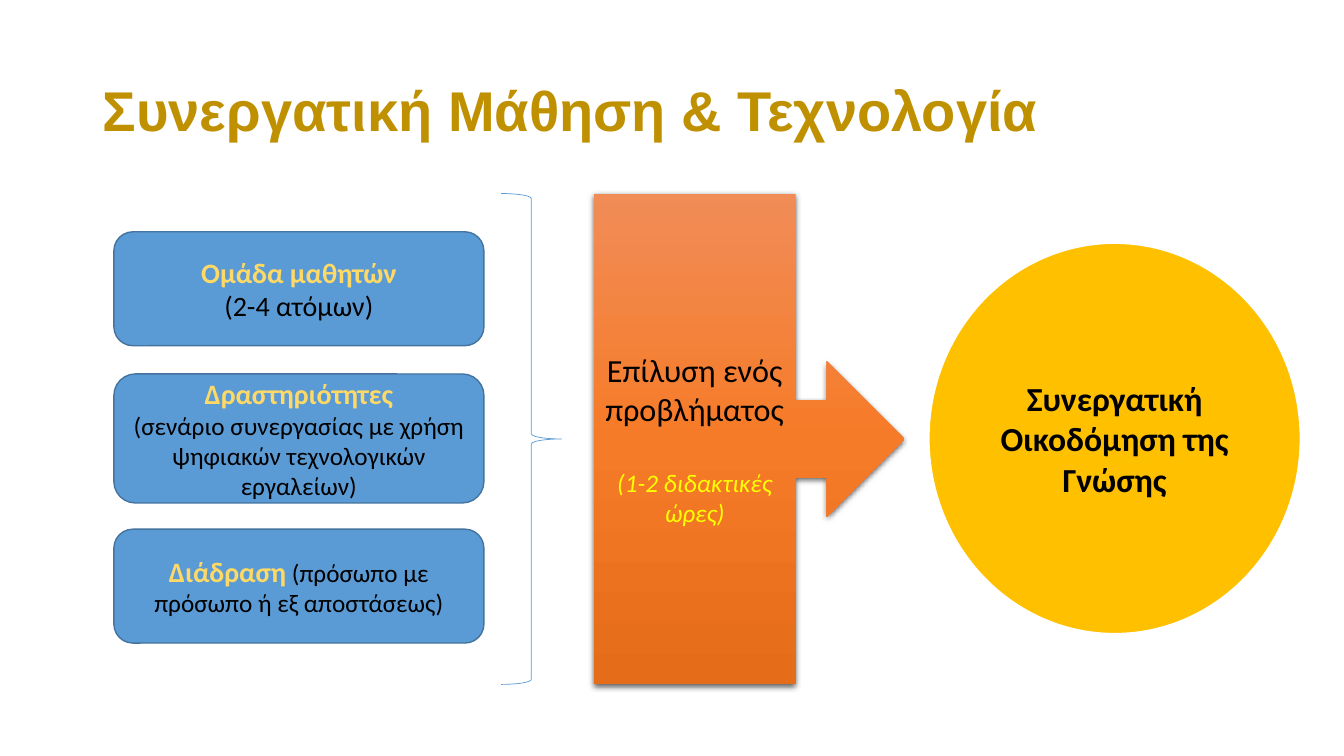
from lxml.etree import SubElement
from copy import deepcopy
from pptx import Presentation
from pptx.dml.color import RGBColor
from pptx.enum.shapes import MSO_SHAPE
from pptx.enum.text import MSO_ANCHOR, PP_ALIGN
from pptx.oxml.ns import qn
from pptx.util import Inches, Pt

BLACK, PALE_GOLD, BLUE = "000000", "FFD966", "5B9BD5"
HEADING = {"size": Pt(20), "bold": True, "color": PALE_GOLD}
DETAIL = {"size": Pt(18), "color": BLACK}

# Each factor: top, height and paragraphs of (text, format) runs
FACTORS = [
    (2.3, 1.13, [[("Ομάδα μαθητών", HEADING)],
                 [("(2-4 ατόμων)", {**DETAIL, "size": Pt(20)})]]),
    (3.71, 1.28, [[("Δραστηριότητες", HEADING)],
                  [("(σενάριο συνεργασίας με χρήση ψηφιακών τεχνολογικών "
                    "εργαλείων)", DETAIL)]]),
    (5.25, 1.13, [[("Διάδραση", HEADING),
                   (" (πρόσωπο με πρόσωπο ή εξ αποστάσεως)", DETAIL)]]),
]


def rgb(value):
    return RGBColor.from_string(value)


def write(frame, paragraphs, align=PP_ALIGN.CENTER, font_name="Calibri"):
    """Fill a text frame with paragraphs of (text, format) runs."""
    frame.word_wrap = True
    frame.vertical_anchor = MSO_ANCHOR.MIDDLE
    for index, runs in enumerate(paragraphs):
        paragraph = frame.add_paragraph() if index else frame.paragraphs[0]
        paragraph.alignment = align
        for text, style in runs:
            run = paragraph.add_run()
            run.text = text
            run.font.name = font_name
            for key, value in style.items():
                if key == "color":
                    run.font.color.rgb = rgb(value)
                else:
                    setattr(run.font, key, value)


def add_preset(slide, preset, box, fill=None, line=None, width=1):
    shape = slide.shapes.add_shape(preset, *map(Inches, box))
    shape.shadow.inherit = False
    if fill:
        shape.fill.solid()
        shape.fill.fore_color.rgb = rgb(fill)
    else:
        shape.fill.background()
    if line:
        shape.line.color.rgb = rgb(line)
        shape.line.width = Pt(width)
    else:
        shape.line.fill.background()
    return shape


def shade_vertically(shape, colors):
    """Apply evenly spaced gradient stops from top to bottom."""
    shape.fill.gradient()
    shape.fill.gradient_angle = 270
    stop_list = shape._element.spPr.find(qn("a:gradFill")).find(qn("a:gsLst"))
    while len(stop_list) < len(colors):
        stop_list.append(deepcopy(stop_list[0]))
    for index, (stop, color) in enumerate(zip(shape.fill.gradient_stops, colors)):
        stop.position = index / (len(colors) - 1)
        stop.color.rgb = rgb(color)


def cast_shadow(shape):
    effects = shape._element.spPr.find(qn("a:effectLst"))
    shadow = SubElement(effects, qn("a:outerShdw"), blurRad=str(Pt(4.5)),
                        dist=str(Pt(1.5)), dir="5400000", algn="ctr", rotWithShape="0")
    color = SubElement(shadow, qn("a:srgbClr"), val=BLACK)
    SubElement(color, qn("a:alpha"), val="63000")


def add_title(slide, box):
    title = slide.shapes.add_textbox(*map(Inches, box))
    style = {"size": Pt(40), "bold": True, "color": "BF9000"}
    write(title.text_frame, [[("Συνεργατική Μάθηση & Τεχνολογία", style)]],
          PP_ALIGN.LEFT, "Arial")
    title.text_frame.paragraphs[0].line_spacing = 0.9


def add_factors(slide, left, width):
    for top, height, paragraphs in FACTORS:
        factor = add_preset(slide, MSO_SHAPE.ROUNDED_RECTANGLE,
                            (left, top, width, height), BLUE, "43739E")
        write(factor.text_frame, paragraphs)


def add_problem(slide, box):
    left, top, width, height = box
    add_preset(slide, MSO_SHAPE.RIGHT_BRACE, (left - 0.92, top, 0.6, height),
               line=BLUE, width=0.5)
    problem = add_preset(slide, MSO_SHAPE.RIGHT_ARROW_CALLOUT, box)
    shade_vertically(problem, ["F18C57", "F67B28", "E56C19"])
    cast_shadow(problem)
    write(problem.text_frame, [
        [("Επίλυση ενός προβλήματος", {"size": Pt(23), "color": BLACK})],
        [("(1-2 διδακτικές ώρες)",
          {"size": Pt(18), "italic": True, "color": "FFFF00"})],
    ])
    problem.text_frame.paragraphs[1].space_before = Pt(28)


def add_outcome(slide, box):
    outcome = add_preset(slide, MSO_SHAPE.OVAL, box, "FFC000", "FFFFFF", 1.5)
    style = {"size": Pt(24), "bold": True, "color": BLACK}
    write(outcome.text_frame, [[("Συνεργατική Οικοδόμηση της Γνώσης", style)]])


def main():
    deck = Presentation()
    deck.slide_width, deck.slide_height = Inches(13.33), Inches(7.5)
    slide = deck.slides.add_slide(deck.slide_layouts[6])
    add_title(slide, (0.92, 0.4, 11.5, 1.45))
    add_factors(slide, 1.13, 3.67)
    add_problem(slide, (5.89, 1.92, 3.08, 4.87))
    add_outcome(slide, (9.21, 2.41, 3.69, 3.88))
    deck.save("out.pptx")


if __name__ == "__main__":
    main()
